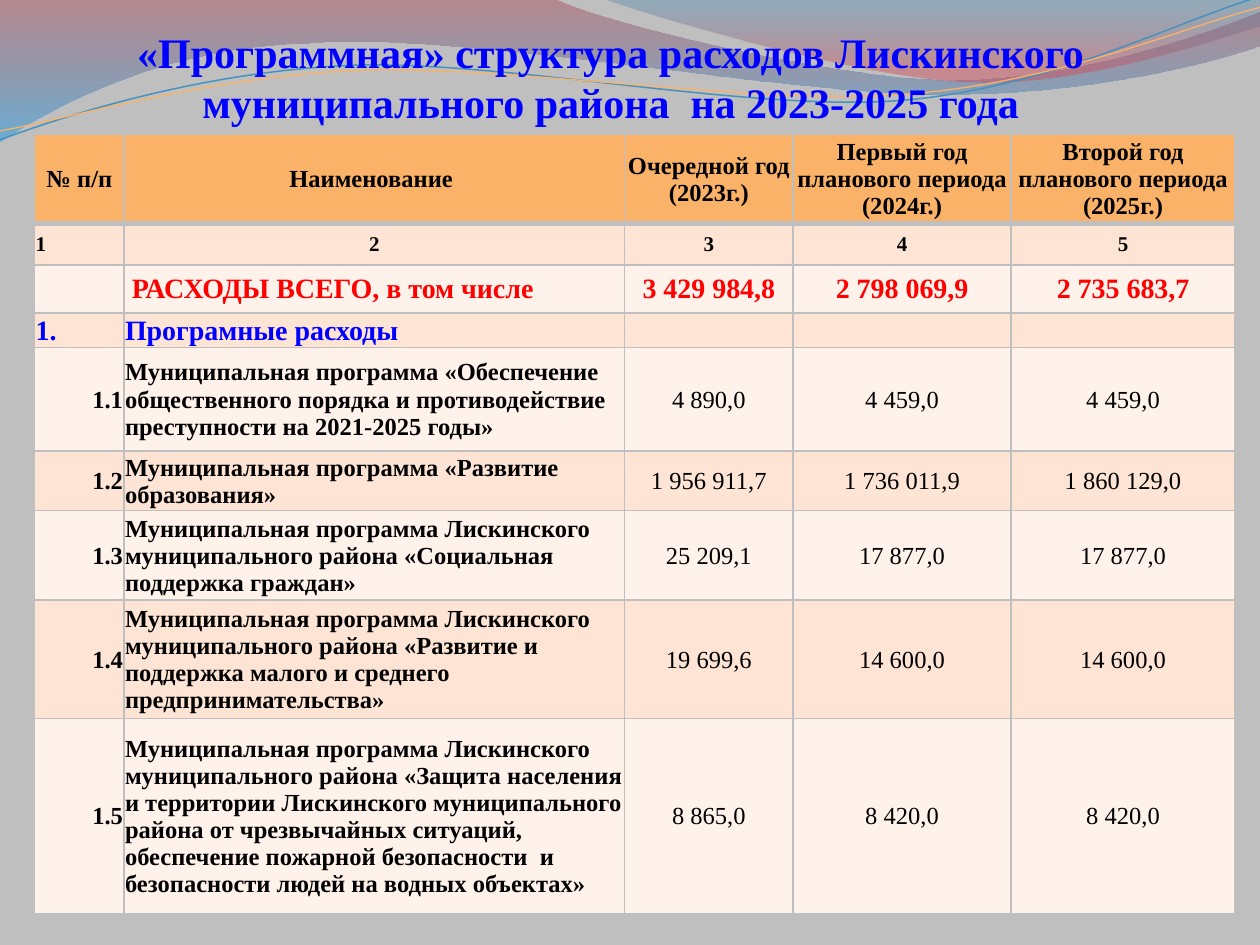
from dataclasses import dataclass

from lxml.etree import SubElement
from pptx import Presentation
from pptx.dml.color import RGBColor
from pptx.enum.text import MSO_ANCHOR as Anchor, PP_ALIGN as Align
from pptx.oxml import parse_xml
from pptx.oxml.ns import nsdecls, qn
from pptx.util import Cm, Pt

FONT = "Times New Roman"
GREY, ORANGE, PEACH, CREAM = "BFBFBF", "F9B268", "FDE4D4", "FEF2EB"
BLACK, RED, BLUE = "000000", "FF0000", "0000FF"
ALIGNS = {"l": Align.LEFT, "c": Align.CENTER, "r": Align.RIGHT}
COLUMN_WIDTHS = (1.8, 10.09, 3.4, 4.39, 4.52)


@dataclass
class Wave:
    start: tuple
    segments: list
    stops: tuple = ()
    line: tuple = ()


@dataclass
class BudgetRow:
    height: float
    cells: tuple
    aligns: str = "rlccc"
    size: int = 14
    color: str = BLACK
    bold_sums: bool = False


WAVES = [
    Wave((0, 0), [(11.18, -0.03), (12.09, 0.43, 16.87, 1.6, 19.25, 1.6),
                  (21.67, 1.6, 24.33, 0.66, 25.4, 0.23), (25.43, 0.91),
                  (24.97, 1.12, 22.1, 1.93, 18.95, 1.91),
                  (15.8, 1.91, 9.7, 0.71, 6.53, 0.86),
                  (3.28, 0.91, 1.17, 2.11, -0.03, 2.87), (0, 0)],
         stops=((0, "A84752", 45), (1, "249FE6", 55))),
    Wave((12.17, -0.03), [(12.93, 0.28, 17.32, 1.57, 19.53, 1.65),
                          (21.74, 1.75, 24.41, 0.81, 25.4, 0.53), (25.4, 0)],
         stops=((0, "2A7EAF", 30), (0.8, "D24B5A", 45))),
    Wave((0, 2.82), [(1.22, 2.36, 4.01, 1.45, 7.04, 1.32),
                     (10.03, 1.19, 15.06, 2.26, 18.11, 2.03),
                     (21.16, 1.8, 23.83, 0.38, 25.35, -0.05)], line=("4592BF", 0.85)),
    Wave((0, 2.64), [(1.19, 2.44, 4.17, 1.55, 7.19, 1.42),
                     (10.24, 1.3, 15.16, 2.13, 18.21, 1.9),
                     (21.23, 1.7, 23.9, 0.53, 25.4, 0.15)], line=("F9B268", 0.75)),
]

BUDGET = [
    BudgetRow(1.75, ("№ п/п", "Наименование ", "Очередной год (2023г.)",
                     "Первый год планового периода (2024г.)",
                     "Второй год планового периода (2025г.)"), "ccccc", bold_sums=True),
    BudgetRow(0.83, ("1", "2", "3", "4", "5"), "lcccc", 12, bold_sums=True),
    BudgetRow(0.97, ("", " РАСХОДЫ ВСЕГО, в том числе", "3 429 984,8", "2 798 069,9",
                     "2 735 683,7"), "llccc", 16, RED, True),
    BudgetRow(0.66, ("1.", "Програмные расходы", "", "", ""), "llccc", 16, BLUE),
    BudgetRow(2.08, ("1.1", "Муниципальная программа «Обеспечение общественного порядка и "
                     "противодействие преступности на 2021-2025 годы»",
                     "4 890,0", "4 459,0", "4 459,0")),
    BudgetRow(1.11, ("1.2", "Муниципальная программа «Развитие образования»",
                     "1 956 911,7", "1 736 011,9", "1 860 129,0")),
    BudgetRow(1.79, ("1.3", "Муниципальная программа Лискинского муниципального района "
                     "«Социальная поддержка граждан»", "25 209,1", "17 877,0", "17 877,0")),
    BudgetRow(2.38, ("1.4", "Муниципальная программа Лискинского муниципального района "
                     "«Развитие и поддержка малого и среднего предпринимательства»",
                     "19 699,6", "14 600,0", "14 600,0")),
    BudgetRow(3.93, ("1.5", "Муниципальная программа Лискинского муниципального района "
                     "«Защита населения и территории Лискинского муниципального района от "
                     "чрезвычайных ситуаций, обеспечение пожарной безопасности  и "
                     "безопасности людей на водных объектах»",
                     "8 865,0", "8 420,0", "8 420,0")),
]


def paint(target, color: str) -> None:
    """Give a fill a solid colour or a colour format its hex value."""
    if hasattr(target, "solid"):
        target.solid()
        target = target.fore_color
    target.rgb = RGBColor.from_string(color)


def write(frame, text: str, *, size: int, color: str = BLACK, bold: bool = True,
          align: str = "c") -> None:
    """Write one formatted paragraph into a text frame."""
    paragraph = frame.paragraphs[0]
    paragraph.alignment = ALIGNS[align]
    if not text:
        ending = SubElement(paragraph._p, qn("a:endParaRPr"), sz=str(size * 100))
        SubElement(ending, qn("a:latin"), typeface=FONT)
        return
    run = paragraph.add_run()
    run.text = text
    run.font.name, run.font.size, run.font.bold = FONT, Pt(size), bold
    paint(run.font.color, color)


def bend(outline, segments: list) -> None:
    """Merge the three straight steps of each curved segment into a Bézier curve."""
    steps = iter(outline._element.xpath(".//a:lnTo"))
    for segment in segments:
        step = next(steps)
        if len(segment) == 6:
            curve = parse_xml(f'<a:cubicBezTo {nsdecls("a")}/>')
            step.addprevious(curve)
            for node in (step, next(steps), next(steps)):
                curve.append(node[0])
                node.getparent().remove(node)


def draw_wave(slide, wave: Wave) -> None:
    """Draw a wave as a translucent gradient band or as a thin line."""
    builder = slide.shapes.build_freeform(*map(Cm, wave.start))
    for segment in wave.segments:
        lengths = [Cm(value) for value in segment]
        builder.add_line_segments(list(zip(lengths[::2], lengths[1::2])), close=False)
    if wave.stops:
        builder.add_line_segments([], close=True)
    band = builder.convert_to_shape()
    bend(band, wave.segments)
    band.shadow.inherit = False
    if wave.line:
        color, width = wave.line
        band.fill.background()
        paint(band.line.fill, color)
        band.line.width = Pt(width)
        return
    band.line.fill.background()
    band.fill.gradient()
    band.fill.gradient_angle = 270
    for stop, (position, color, _) in zip(band.fill.gradient_stops, wave.stops):
        stop.position = position
        paint(stop.color, color)
    for tint, (_, _, opacity) in zip(band._element.xpath(".//a:gs/a:srgbClr"), wave.stops):
        SubElement(tint, qn("a:alpha"), val=str(opacity * 1000))


def border_cell(cell, **widths: float) -> None:
    """Put grey borders on the sides L, R, T and B of a cell."""
    properties = cell._tc.get_or_add_tcPr()
    for index, (side, width) in enumerate(widths.items()):
        properties.insert(index, parse_xml(
            f'<a:ln{side} {nsdecls("a")} w="{Pt(width)}"><a:solidFill>'
            f'<a:srgbClr val="{GREY}"/></a:solidFill></a:ln{side}>'))


def draw_budget(slide, rows: list) -> None:
    """Draw the table of budget spending."""
    budget = slide.shapes.add_table(
        len(rows), len(COLUMN_WIDTHS), Cm(0.7), Cm(2.71), Cm(sum(COLUMN_WIDTHS)),
        Cm(sum(row.height for row in rows))).table
    for column, width in zip(budget.columns, COLUMN_WIDTHS):
        column.width = Cm(width)
    for r, row in enumerate(rows):
        budget.rows[r].height = Cm(row.height)
        for c, (text, align) in enumerate(zip(row.cells, row.aligns)):
            cell = budget.cell(r, c)
            cell.margin_left = cell.margin_right = cell.margin_top = Cm(0.02)
            cell.margin_bottom = 0
            cell.vertical_anchor = Anchor.MIDDLE
            paint(cell.fill, ORANGE if r == 0 else PEACH if r % 2 else CREAM)
            border_cell(cell, L=1, R=1, T=3 if r == 1 else 1, B=3 if r == 0 else 1)
            write(cell.text_frame, text, size=row.size, color=row.color,
                  bold=c < 2 or row.bold_sums, align=align)


def draw_title(slide, text: str) -> None:
    """Draw the slide heading."""
    heading = slide.shapes.add_textbox(Cm(0.6), Cm(0.58), Cm(23.42), Cm(1.98)).text_frame
    heading.word_wrap = True
    heading.vertical_anchor = Anchor.BOTTOM
    heading.margin_left = heading.margin_right = heading.margin_bottom = 0
    heading.margin_top = Cm(0.13)
    write(heading, text, size=24, color=BLUE)


def main() -> None:
    """Build the slide and save it."""
    deck = Presentation()
    deck.slide_width, deck.slide_height = Cm(25.4), Cm(19.05)
    slide = deck.slides.add_slide(deck.slide_layouts[6])
    paint(slide.background.fill, GREY)
    for wave in WAVES:
        draw_wave(slide, wave)
    draw_title(slide, "«Программная» структура расходов Лискинского муниципального района  "
                      "на 2023-2025 года")
    draw_budget(slide, BUDGET)
    deck.save("out.pptx")


if __name__ == "__main__":
    main()
